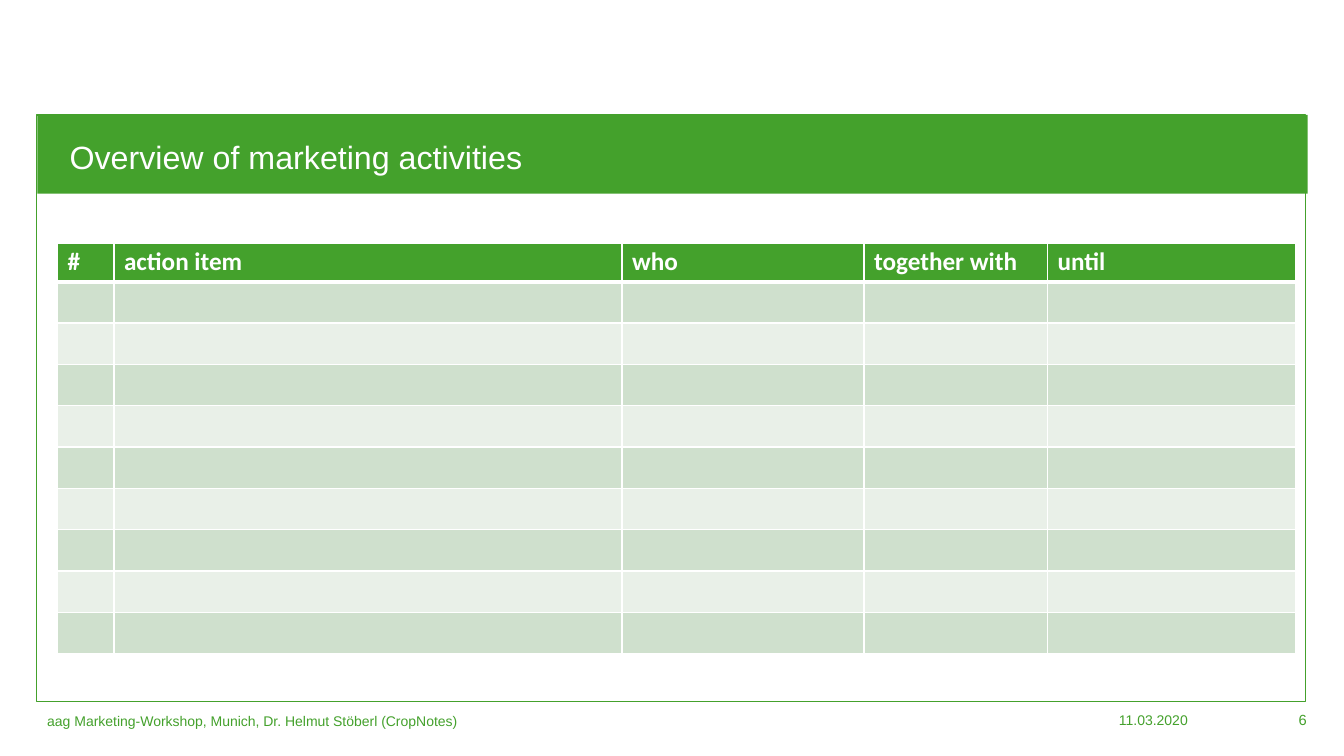
from dataclasses import dataclass

from lxml.etree import SubElement
from pptx import Presentation
from pptx.dml.color import RGBColor
from pptx.enum.shapes import MSO_SHAPE
from pptx.enum.text import MSO_ANCHOR, MSO_AUTO_SIZE, PP_ALIGN
from pptx.oxml.ns import qn
from pptx.slide import Slide
from pptx.table import _Cell
from pptx.text.text import TextFrame
from pptx.util import Inches, Pt

GREEN = RGBColor(0x44, 0xA1, 0x2C)
WHITE = RGBColor(0xFF, 0xFF, 0xFF)
BAND_DARK = RGBColor(0xCF, 0xE0, 0xCD)
BAND_LIGHT = RGBColor(0xE9, 0xF0, 0xE8)
FONT = "Arial"


@dataclass(frozen=True)
class Box:
    left: float
    top: float
    width: float
    height: float

    def lengths(self) -> tuple:
        return tuple(Inches(v) for v in (self.left, self.top, self.width, self.height))


@dataclass(frozen=True)
class Panel:
    box: Box
    fill: RGBColor
    outlined: bool


@dataclass(frozen=True)
class FooterItem:
    text: str
    box: Box
    size: float
    align: PP_ALIGN
    anchor: MSO_ANCHOR
    inset: float = 0


@dataclass(frozen=True)
class Column:
    heading: str
    width: float


PANELS = [
    Panel(Box(0.36, 1.14, 12.59, 5.82), WHITE, True),
    Panel(Box(0.37, 1.14, 12.6, 0.78), GREEN, False),
]
FOOTER = [
    FooterItem("6", Box(11.92, 7.05, 1.04, 0.18), 10.5, PP_ALIGN.RIGHT, MSO_ANCHOR.TOP),
    FooterItem("11.03.2020", Box(7.94, 7.06, 3.84, 0.17), 10, PP_ALIGN.RIGHT, MSO_ANCHOR.MIDDLE),
    FooterItem("aag Marketing-Workshop, Munich, Dr. Helmut Stöberl (CropNotes)",
               Box(0.37, 6.95, 9.99, 0.4), 10, PP_ALIGN.LEFT, MSO_ANCHOR.MIDDLE, 0.1),
]
COLUMNS = [
    Column("#", 0.56),
    Column("action item", 5.04),
    Column("who", 2.4),
    Column("together with", 1.82),
    Column("until", 2.46),
]
ACTION_ROWS = 9
HEADER_HEIGHT = 0.31
ROW_HEIGHT = 0.41


def write(frame: TextFrame, text: str, size: float, color: RGBColor,
          align: PP_ALIGN, anchor: MSO_ANCHOR, inset: float = 0) -> None:
    frame.text = text
    frame.word_wrap = True
    frame.auto_size = MSO_AUTO_SIZE.NONE
    frame.vertical_anchor = anchor
    frame.margin_left = frame.margin_right = Inches(inset)
    frame.margin_top = frame.margin_bottom = Inches(inset / 2)
    line = frame.paragraphs[0]
    line.alignment = align
    line.font.name, line.font.size = FONT, Pt(size)
    line.font.color.rgb = color


def add_panel(slide: Slide, panel: Panel) -> None:
    rectangle = slide.shapes.add_shape(MSO_SHAPE.RECTANGLE, *panel.box.lengths())
    rectangle.shadow.inherit = False
    rectangle.fill.solid()
    rectangle.fill.fore_color.rgb = panel.fill
    if panel.outlined:
        rectangle.line.color.rgb = GREEN
        rectangle.line.width = Pt(1)
    else:
        rectangle.line.fill.background()


def add_title(slide: Slide, text: str) -> None:
    title = slide.shapes.title
    title.left, title.top, title.width, title.height = Box(0.69, 1.4, 6.95, 0.35).lengths()
    write(title.text_frame, text, 23, WHITE, PP_ALIGN.LEFT, MSO_ANCHOR.MIDDLE)
    title.text_frame.paragraphs[0].line_spacing = 0.9
    slide.shapes._spTree.append(title._element)


def add_footer_item(slide: Slide, item: FooterItem) -> None:
    box = slide.shapes.add_textbox(*item.box.lengths())
    write(box.text_frame, item.text, item.size, GREEN, item.align, item.anchor, item.inset)


def style_cell(cell: _Cell, fill: RGBColor, top: float, bottom: float) -> None:
    properties = cell._tc.get_or_add_tcPr()
    for side, width in (("L", 1), ("R", 1), ("T", top), ("B", bottom)):
        border = SubElement(properties, qn(f"a:ln{side}"), w=str(Pt(width)))
        SubElement(SubElement(border, qn("a:solidFill")), qn("a:srgbClr"), val=str(WHITE))
    cell.fill.solid()
    cell.fill.fore_color.rgb = fill
    cell.margin_top = cell.margin_bottom = Inches(0.04)
    font = cell.text_frame.paragraphs[0].font
    font.name, font.size = FONT, Pt(14)


def add_action_table(slide: Slide) -> None:
    area = Box(0.57, 2.41, sum(c.width for c in COLUMNS), HEADER_HEIGHT + ACTION_ROWS * ROW_HEIGHT)
    table = slide.shapes.add_table(ACTION_ROWS + 1, len(COLUMNS), *area.lengths()).table
    for index, row in enumerate(table.rows):
        row.height = Inches(ROW_HEIGHT if index else HEADER_HEIGHT)
        band = BAND_DARK if index % 2 else BAND_LIGHT
        for cell in row.cells:
            style_cell(cell, band if index else GREEN,
                       top=3 if index == 1 else 1, bottom=1 if index else 3)
    for index, column in enumerate(COLUMNS):
        table.columns[index].width = Inches(column.width)
        heading = table.cell(0, index)
        heading.text = column.heading
        font = heading.text_frame.paragraphs[0].font
        font.bold = True
        font.color.rgb = WHITE


def main() -> None:
    presentation = Presentation()
    presentation.slide_width = Inches(13.33)
    presentation.slide_height = Inches(7.5)
    slide = presentation.slides.add_slide(presentation.slide_layouts[5])
    for panel in PANELS:
        add_panel(slide, panel)
    add_title(slide, "Overview of marketing activities")
    for item in FOOTER:
        add_footer_item(slide, item)
    add_action_table(slide)
    presentation.save("out.pptx")


if __name__ == "__main__":
    main()
